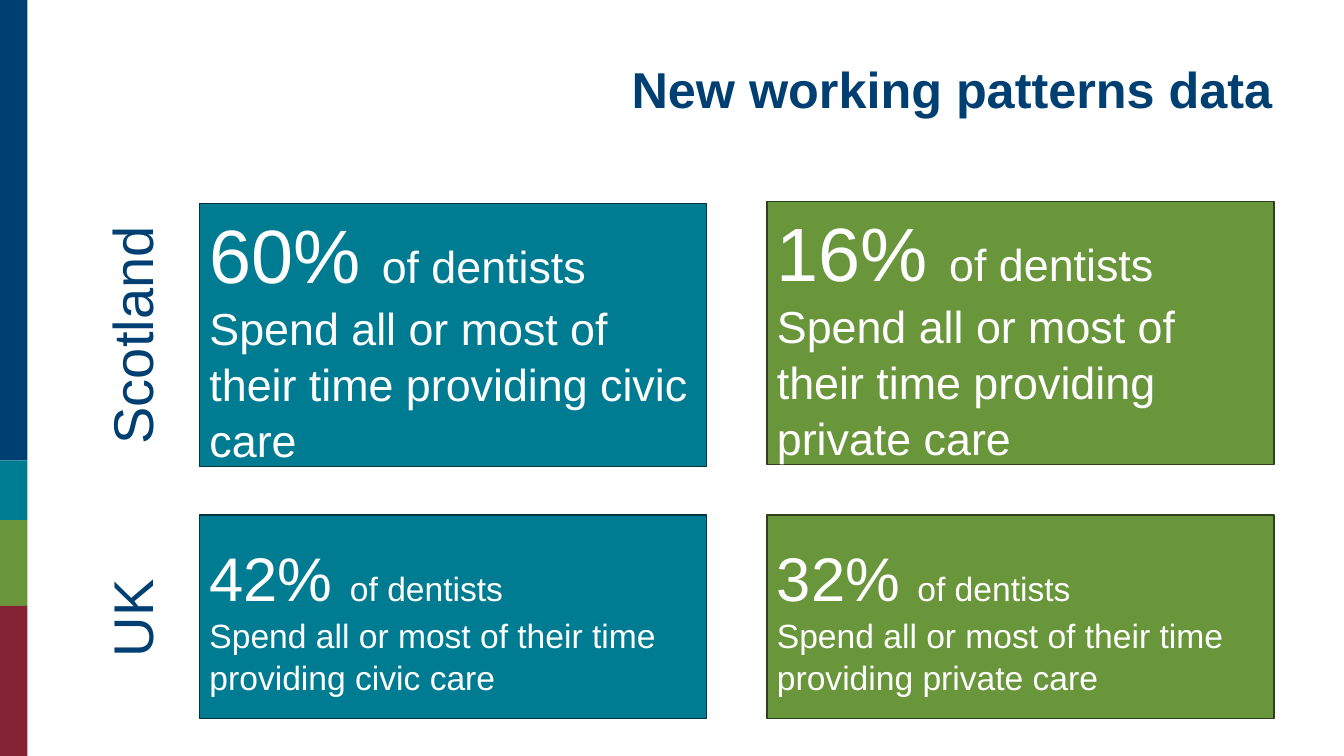
from pptx import Presentation
from pptx.dml.color import RGBColor
from pptx.enum.shapes import MSO_SHAPE
from pptx.enum.text import MSO_ANCHOR, MSO_AUTO_SIZE, PP_ALIGN
from pptx.util import Cm, Pt

NAVY, TEAL, GREEN, MAROON = "003F71", "007C92", "69963B", "822433"
WHITE, TEAL_EDGE, GREEN_EDGE = "FFFFFF", "003640", "2E421A"


def color(value):
    """Turn a hex string into a colour."""
    return RGBColor.from_string(value)


def add_text(paragraph, text, size=32, fill=WHITE, bold=False, font="Arial"):
    """Add a formatted run to a paragraph."""
    run = paragraph.add_run()
    run.text = text
    run.font.name = font
    run.font.size = Pt(size)
    run.font.bold = bold
    run.font.color.rgb = color(fill)


class SlideBuilder:
    """Hold the style and the current slide."""

    def __init__(self, presentation):
        """Start a title-only slide."""
        self.slide = presentation.slides.add_slide(presentation.slide_layouts[5])

    def title(self, text):
        """Place and format the title."""
        title = self.slide.shapes.title
        title.left, title.top, title.width, title.height = Cm(1.8), Cm(1.04), Cm(30.53), Cm(1.78)
        frame = title.text_frame
        frame.word_wrap = True
        frame.auto_size = MSO_AUTO_SIZE.NONE
        frame.vertical_anchor = MSO_ANCHOR.TOP
        paragraph = frame.paragraphs[0]
        paragraph.alignment = PP_ALIGN.RIGHT
        paragraph.line_spacing = 1.2
        paragraph.space_after = Pt(12)
        add_text(paragraph, text, size=36, fill=NAVY, bold=True)

    def block(self, left, top, width, height, fill, edge=None):
        """Draw a filled rectangle, outlined when an edge colour is given."""
        shape = self.slide.shapes.add_shape(
            MSO_SHAPE.RECTANGLE, Cm(left), Cm(top), Cm(width), Cm(height))
        shape.shadow.inherit = False
        shape.fill.solid()
        shape.fill.fore_color.rgb = color(fill)
        if edge:
            shape.line.color.rgb = color(edge)
            shape.line.width = Pt(1)
        else:
            shape.line.fill.background()
        return shape

    def card(self, left, top, height, share, care, sizes, fill, edge):
        """Draw a card with a large share and its explanation."""
        frame = self.block(left, top, 12.78, height, fill, edge).text_frame
        frame.word_wrap = True
        frame.vertical_anchor = MSO_ANCHOR.MIDDLE
        share_size, text_size = sizes
        heading, detail = frame.paragraphs[0], frame.add_paragraph()
        for paragraph in (heading, detail):
            paragraph.alignment = PP_ALIGN.LEFT
            paragraph.line_spacing = 1.04
        add_text(heading, f"{share} ", size=share_size)
        add_text(heading, "of dentists", size=text_size)
        add_text(detail, f"Spend all or most of their time providing {care} care", size=text_size)

    def row_label(self, text, left, top, width):
        """Add a region name turned to read upwards."""
        box = self.slide.shapes.add_textbox(Cm(left), Cm(top), Cm(width), Cm(1.96))
        box.rotation = 270
        box.text_frame.word_wrap = False
        box.text_frame.auto_size = MSO_AUTO_SIZE.SHAPE_TO_FIT_TEXT
        add_text(box.text_frame.paragraphs[0], text, size=40, fill=NAVY)


def main():
    """Build and save the presentation."""
    presentation = Presentation()
    presentation.slide_width, presentation.slide_height = Cm(33.87), Cm(19.05)
    builder = SlideBuilder(presentation)

    band_top = 0
    for fill, height in ((NAVY, 11.6), (TEAL, 1.51), (GREEN, 2.16), (MAROON, 3.78)):
        builder.block(0, band_top, 0.69, height, fill)
        band_top += height

    builder.title("New working patterns data")
    columns = ((5.03, "civic", TEAL, TEAL_EDGE), (19.33, "private", GREEN, GREEN_EDGE))
    rows = (
        ((5.13, 5.08), 6.63, ("60%", "16%"), (54, 32)),
        ((12.98, 12.98), 5.13, ("42%", "32%"), (44, 24)),
    )
    for tops, height, shares, sizes in rows:
        for (left, care, fill, edge), top, share in zip(columns, tops, shares):
            builder.card(left, top, height, share, care, sizes, fill, edge)

    builder.row_label("Scotland", 0.28, 7.44, 6.05)
    builder.row_label("UK", 2.06, 14.58, 2.49)
    presentation.save("out.pptx")


if __name__ == "__main__":
    main()
